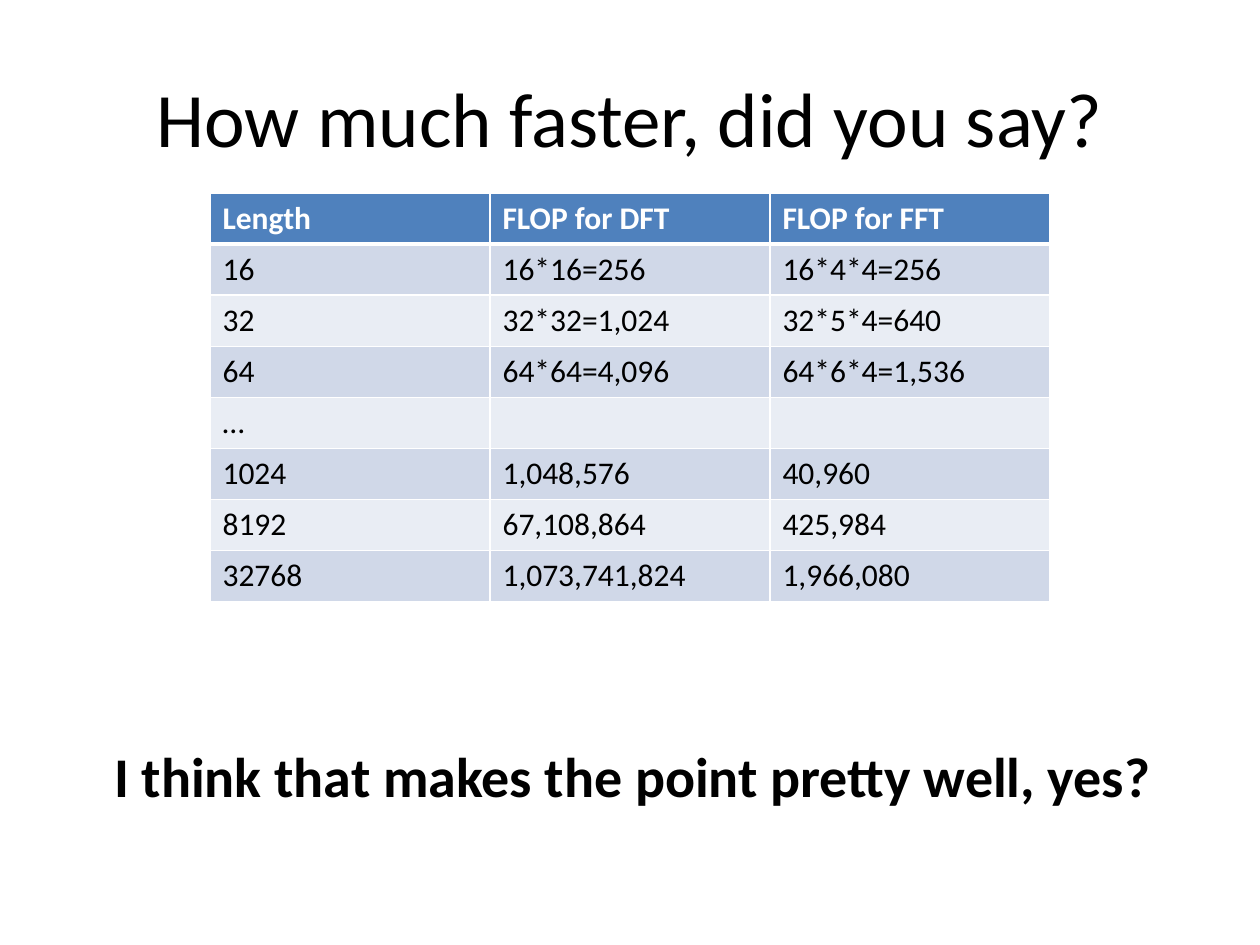
from dataclasses import dataclass

from lxml.etree import SubElement
from pptx import Presentation
from pptx.dml.color import RGBColor
from pptx.enum.text import MSO_ANCHOR, MSO_AUTO_SIZE, PP_ALIGN
from pptx.oxml.ns import qn
from pptx.slide import Slide
from pptx.table import _Cell as Cell
from pptx.text.text import _Paragraph as Paragraph
from pptx.util import Emu, Inches, Pt

PX_PER_INCH = 126


@dataclass(frozen=True)
class Theme:
    font: str = "Calibri"
    text: str = "000000"
    header_text: str = "FFFFFF"
    header_fill: str = "4F81BD"
    band_fills: tuple[str, str] = ("D0D8E8", "E9EDF4")
    border: str = "FFFFFF"
    title_size: int = 44
    closing_size: int = 32
    table_size: int = 18
    border_width: int = 1
    header_rule_width: int = 3


@dataclass(frozen=True)
class Box:
    left: int
    top: int
    width: int
    height: int

    def emu(self) -> tuple[Emu, Emu, Emu, Emu]:
        return px(self.left), px(self.top), px(self.width), px(self.height)


@dataclass(frozen=True)
class Line:
    """A single centred line of text."""
    text: str
    box: Box
    size: int
    bold: bool = False
    wrap: bool = True


THEME = Theme()
TABLE_BOX = Box(210, 193, 840, 408)
LINES = (
    Line("How much faster, did you say?", Box(63, 38, 1134, 158), THEME.title_size),
    Line("I think that makes the point pretty well, yes?", Box(96, 735, 1074, 81),
         THEME.closing_size, bold=True, wrap=False),
)
ROWS = (
    ("Length", "FLOP for DFT", "FLOP for FFT"),
    ("16", "16*16=256", "16*4*4=256"),
    ("32", "32*32=1,024", "32*5*4=640"),
    ("64", "64*64=4,096", "64*6*4=1,536"),
    ("…", "", ""),
    ("1024", "1,048,576", "40,960"),
    ("8192", "67,108,864", "425,984"),
    ("32768", "1,073,741,824", "1,966,080"),
)


def px(length: int) -> Emu:
    return Emu(round(length * Inches(1) / PX_PER_INCH))


def format_runs(paragraph: Paragraph, size: int, color: str, bold: bool) -> None:
    for run in paragraph.runs:
        run.font.name = THEME.font
        run.font.size = Pt(size)
        run.font.bold = bold
        run.font.color.rgb = RGBColor.from_string(color)


def add_line(slide: Slide, line: Line) -> None:
    text_frame = slide.shapes.add_textbox(*line.box.emu()).text_frame
    text_frame.text = line.text
    text_frame.word_wrap = line.wrap
    text_frame.auto_size = MSO_AUTO_SIZE.NONE if line.wrap else MSO_AUTO_SIZE.SHAPE_TO_FIT_TEXT
    text_frame.vertical_anchor = MSO_ANCHOR.MIDDLE if line.wrap else MSO_ANCHOR.TOP
    paragraph = text_frame.paragraphs[0]
    paragraph.alignment = PP_ALIGN.CENTER
    format_runs(paragraph, line.size, THEME.text, line.bold)


def add_borders(cell: Cell, top: int, bottom: int) -> None:
    """Borders must come before the fill, so call this on an unfilled cell."""
    properties = cell._tc.get_or_add_tcPr()
    side = THEME.border_width
    for tag, width in (("a:lnL", side), ("a:lnR", side), ("a:lnT", top), ("a:lnB", bottom)):
        border = SubElement(properties, qn(tag), w=str(Pt(width)))
        fill = SubElement(border, qn("a:solidFill"))
        SubElement(fill, qn("a:srgbClr"), val=THEME.border)


def style_cell(cell: Cell, row_index: int) -> None:
    is_header = row_index == 0
    add_borders(
        cell,
        top=THEME.header_rule_width if row_index == 1 else THEME.border_width,
        bottom=THEME.header_rule_width if is_header else THEME.border_width,
    )
    cell.fill.solid()
    band_fill = THEME.band_fills[(row_index - 1) % 2]
    cell.fill.fore_color.rgb = RGBColor.from_string(THEME.header_fill if is_header else band_fill)
    color = THEME.header_text if is_header else THEME.text
    format_runs(cell.text_frame.paragraphs[0], THEME.table_size, color, is_header)


def add_flop_table(slide: Slide) -> None:
    table = slide.shapes.add_table(len(ROWS), len(ROWS[0]), *TABLE_BOX.emu()).table
    for row_index, row in enumerate(ROWS):
        for column_index, text in enumerate(row):
            cell = table.cell(row_index, column_index)
            cell.text_frame.text = text
            style_cell(cell, row_index)


def main() -> None:
    presentation = Presentation()
    presentation.slide_width = Inches(10)
    presentation.slide_height = Inches(7.5)
    slide = presentation.slides.add_slide(presentation.slide_layouts[6])
    title, closing = LINES
    add_line(slide, title)
    add_flop_table(slide)
    add_line(slide, closing)
    presentation.save("out.pptx")


if __name__ == "__main__":
    main()
